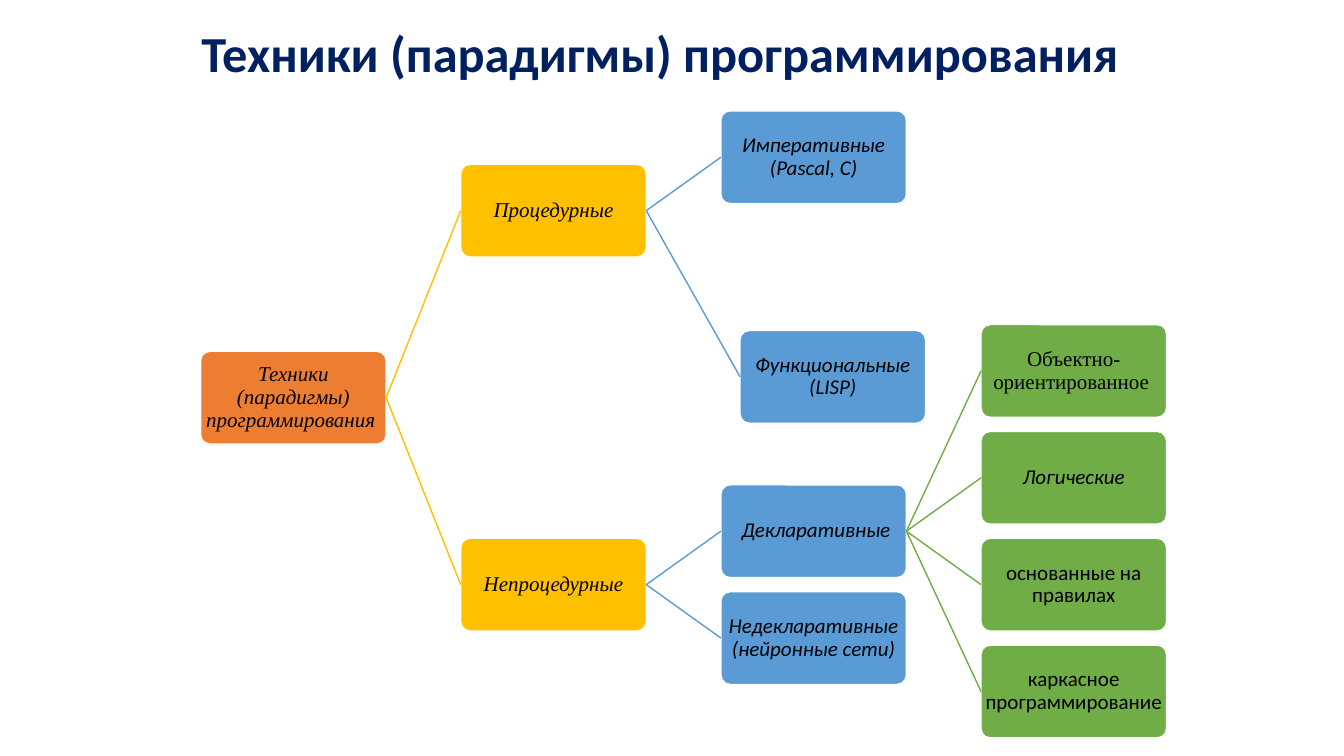
import pptx
import pptx.util
import pptx.dml.color
import pptx.enum.shapes
import pptx.enum.text
import pptx.oxml.ns
import lxml.etree

Inches = pptx.util.Inches
BOX_WIDTH, BOX_HEIGHT = 1.84, 0.92
LEFT, TOP = 1.99, 1.1
LEVEL_STEP, ROW_STEP = 2.58, 0.53
LEVEL_COLORS = ["ED7D31", "FFC000", "5B9BD5", "70AD47"]
SERIF = "Times New Roman"
SANS = "Calibri"

# name: (parent, level, row, shift, text, font, italic)
NODES = {
    "root": (None, 0, 4.5, 0, "Техники (парадигмы) программирования ", SERIF, True),
    "procedural": ("root", 1, 1, 0, "Процедурные", SERIF, True),
    "imperative": ("procedural", 2, 0, 0, "Императивные (Pascal, C)", SANS, True),
    "functional": ("procedural", 2, 4.11, 0.19, "Функциональные (LISP)", SANS, True),
    "nonprocedural": ("root", 1, 8, 0, "Непроцедурные", SERIF, True),
    "declarative": ("nonprocedural", 2, 7, 0, " Декларативные", SANS, True),
    "object": ("declarative", 3, 4, 0, "Объектно-ориентированное ", SERIF, False),
    "logic": ("declarative", 3, 6, 0, "Логические", SANS, True),
    "rules": ("declarative", 3, 8, 0, "основанные на правилах", SANS, False),
    "frames": ("declarative", 3, 10, 0, "каркасное программирование", SANS, False),
    "nondeclarative": ("nonprocedural", 2, 9, 0, "Недекларативные (нейронные сети)", SANS, True),
}


def color(value):
    return pptx.dml.color.RGBColor.from_string(value)


def write_text(shape, text, *, size, font, fill, bold=False, italic=False,
               spacing=1.0, insets=(0.1, 0.05, 0.1, 0.05), anchor="TOP"):
    frame = shape.text_frame
    frame.word_wrap = True
    frame.vertical_anchor = pptx.enum.text.MSO_ANCHOR[anchor]
    frame.margin_left, frame.margin_top, frame.margin_right, frame.margin_bottom = map(Inches, insets)
    paragraph = frame.paragraphs[0]
    paragraph.alignment = pptx.enum.text.PP_ALIGN.CENTER
    paragraph.line_spacing = spacing
    run = paragraph.add_run()
    run.text = text
    run.font.size = pptx.util.Pt(size)
    run.font.name = font
    run.font.bold = bold
    run.font.italic = italic
    run.font.color.rgb = color(fill)


def add_title(slide):
    title = slide.shapes.add_textbox(Inches(1.78), Inches(0.17), Inches(9.77), Inches(0.71))
    title.fill.solid()
    title.fill.fore_color.rgb = color("FFFFFF")
    write_text(title, "Техники (парадигмы) программирования", size=36, font=SANS,
               fill="002060", bold=True, insets=(0.1, 0.05, 0.33, 0.05))


def add_box(slide, level, row, shift, text, font, italic):
    box = slide.shapes.add_shape(
        pptx.enum.shapes.MSO_SHAPE.ROUNDED_RECTANGLE,
        Inches(LEFT + level * LEVEL_STEP + shift), Inches(TOP + row * ROW_STEP),
        Inches(BOX_WIDTH), Inches(BOX_HEIGHT))
    box.adjustments[0] = 0.1
    box.shadow.inherit = False
    box.fill.solid()
    box.fill.fore_color.rgb = color(LEVEL_COLORS[level])
    box.line.color.rgb = color("FFFFFF")
    box.line.width = pptx.util.Pt(1)
    write_text(box, text, size=15, font=font, fill="000000", italic=italic,
               spacing=0.9, insets=(0.01,) * 4, anchor="MIDDLE")
    return box


def add_branch(slide, parent, child, level):
    branch = slide.shapes.add_connector(pptx.enum.shapes.MSO_CONNECTOR.STRAIGHT, 0, 0, 0, 0)
    branch.begin_connect(parent, 3)
    branch.end_connect(child, 1)
    branch.line.color.rgb = color(LEVEL_COLORS[level])
    branch.line.width = pptx.util.Pt(1)
    lxml.etree.SubElement(branch._element.spPr, pptx.oxml.ns.qn("a:effectLst"))


def main():
    presentation = pptx.Presentation()
    presentation.slide_width = Inches(13.33)
    presentation.slide_height = Inches(7.5)
    slide = presentation.slides.add_slide(presentation.slide_layouts[6])
    add_title(slide)
    boxes = {}
    for name, (parent, level, *details) in NODES.items():
        boxes[name] = add_box(slide, level, *details)
        if parent:
            add_branch(slide, boxes[parent], boxes[name], level)
    presentation.save("out.pptx")


if __name__ == "__main__":
    main()
